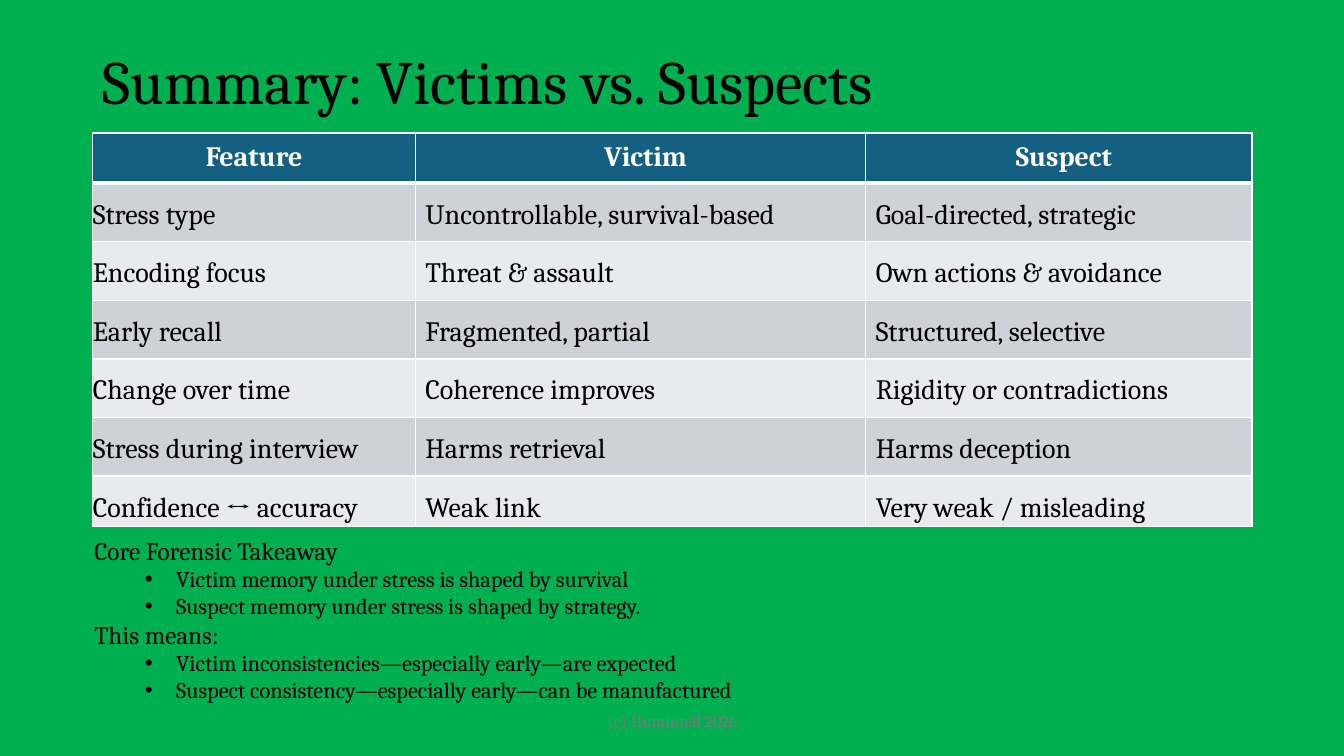
from lxml.etree import SubElement as Sub
from pptx import Presentation
from pptx.dml.color import RGBColor
from pptx.enum.text import MSO_ANCHOR as Anchor, MSO_AUTO_SIZE as Fit, PP_ALIGN as Align
from pptx.oxml.ns import qn
from pptx.util import Cm, Pt

GREEN = RGBColor(0x00, 0xB0, 0x50)
BLUE = RGBColor(0x15, 0x60, 0x82)
DARK = RGBColor(0xCC, 0xD2, 0xD8)
LIGHT = RGBColor(0xE8, 0xEA, 0xED)
WHITE = RGBColor(0xFF, 0xFF, 0xFF)
BLACK = RGBColor(0x00, 0x00, 0x00)
GRAY = RGBColor(0x79, 0x79, 0x79)

FACE = "Cambria"
PAD = Cm(0.25)
COLS = [8.13, 11.35, 9.73]
ROWS = [
    ["Feature", "Victim", "Suspect"],
    ["Stress type", "Uncontrollable, survival-based", "Goal-directed, strategic"],
    ["Encoding focus", "Threat & assault", "Own actions & avoidance"],
    ["Early recall", "Fragmented, partial", "Structured, selective"],
    ["Change over time", "Coherence improves", "Rigidity or contradictions"],
    ["Stress during interview", "Harms retrieval", "Harms deception"],
    ["Confidence ↔ accuracy", "Weak link", "Very weak / misleading"],
]
NOTES = [
    ("Core Forensic Takeaway", [
        "Victim memory under stress is shaped by survival",
        "Suspect memory under stress is shaped by strategy.",
    ]),
    ("This means:", [
        "Victim inconsistencies—especially early—are expected",
        "Suspect consistency—especially early—can be manufactured",
    ]),
]


def apply(item, look):
    for key, value in look.items():
        setattr(item, key, value)


def write(para, text, size, color=BLACK, bold=False, **look):
    apply(para, look)
    run = para.add_run()
    run.text = text
    apply(run.font, {"name": FACE, "size": Pt(size), "bold": bold})
    run.font.color.rgb = color


def add_box(slide, area, **look):
    frame = slide.shapes.add_textbox(*map(Cm, area)).text_frame
    apply(frame, {"word_wrap": True, **look})
    return frame


def add_bullet(para):
    para.level = 1
    props = para._p.get_or_add_pPr()
    props.set("marL", str(Cm(2.06)))
    props.set("indent", str(Cm(-0.79)))
    Sub(props, qn("a:buFont"), typeface="Arial")
    Sub(props, qn("a:buChar"), char="•")


def add_edges(cell, head):
    props = cell._tc.get_or_add_tcPr()
    for side in "LRTB":
        width = 3 if head and side == "B" else 1
        line = Sub(props, qn(f"a:ln{side}"), w=str(Pt(width)))
        fill = Sub(line, qn("a:solidFill"))
        Sub(fill, qn("a:srgbClr"), val=str(WHITE))


def fill_cell(cell, text, row, col):
    head, last = row == 0, row == len(ROWS) - 1
    apply(cell, {
        "margin_left": PAD if col else 0,
        "margin_top": 0 if head else PAD,
        "margin_right": 0,
        "margin_bottom": 0 if last else PAD,
        "vertical_anchor": Anchor.BOTTOM if head else Anchor.MIDDLE,
    })
    add_edges(cell, head)
    cell.fill.solid()
    cell.fill.fore_color.rgb = BLUE if head else DARK if row % 2 else LIGHT
    write(cell.text_frame.paragraphs[0], text, 20, WHITE if head else BLACK, head,
          alignment=Align.CENTER if head else Align.LEFT,
          line_spacing=1.15, space_after=Pt(6))


def add_grid(slide):
    area = map(Cm, (2.34, 3.35, 29.21, 9.89))
    grid = slide.shapes.add_table(len(ROWS), len(COLS), *area).table
    for col, width in zip(grid.columns, COLS):
        col.width = Cm(width)
    for i, texts in enumerate(ROWS):
        grid.rows[i].height = Cm(1.27 if i in (0, len(ROWS) - 1) else 1.47)
        for j, text in enumerate(texts):
            fill_cell(grid.cell(i, j), text, i, j)


def add_notes(slide):
    frame = add_box(slide, (2.13, 13.36, 29.21, 5.31), auto_size=Fit.SHAPE_TO_FIT_TEXT)
    para = frame.paragraphs[0]
    for i, (head, points) in enumerate(NOTES):
        if i:
            para = frame.add_paragraph()
        write(para, head, 18)
        for point in points:
            para = frame.add_paragraph()
            add_bullet(para)
            write(para, point, 16)


def main():
    deck = Presentation()
    apply(deck, {"slide_width": Cm(33.87), "slide_height": Cm(19.05)})
    slide = deck.slides.add_slide(deck.slide_layouts[6])
    slide.background.fill.solid()
    slide.background.fill.fore_color.rgb = GREEN
    title = add_box(slide, (2.34, 0.3, 29.21, 3.68), vertical_anchor=Anchor.MIDDLE)
    write(title.paragraphs[0], "Summary: Victims vs. Suspects", 44, line_spacing=0.9)
    add_grid(slide)
    foot = add_box(slide, (11.23, 17.65, 11.43, 1.02), vertical_anchor=Anchor.MIDDLE)
    write(foot.paragraphs[0], "(c) Humintell 2026", 12, GRAY, alignment=Align.CENTER)
    add_notes(slide)
    deck.save("out.pptx")


if __name__ == "__main__":
    main()
